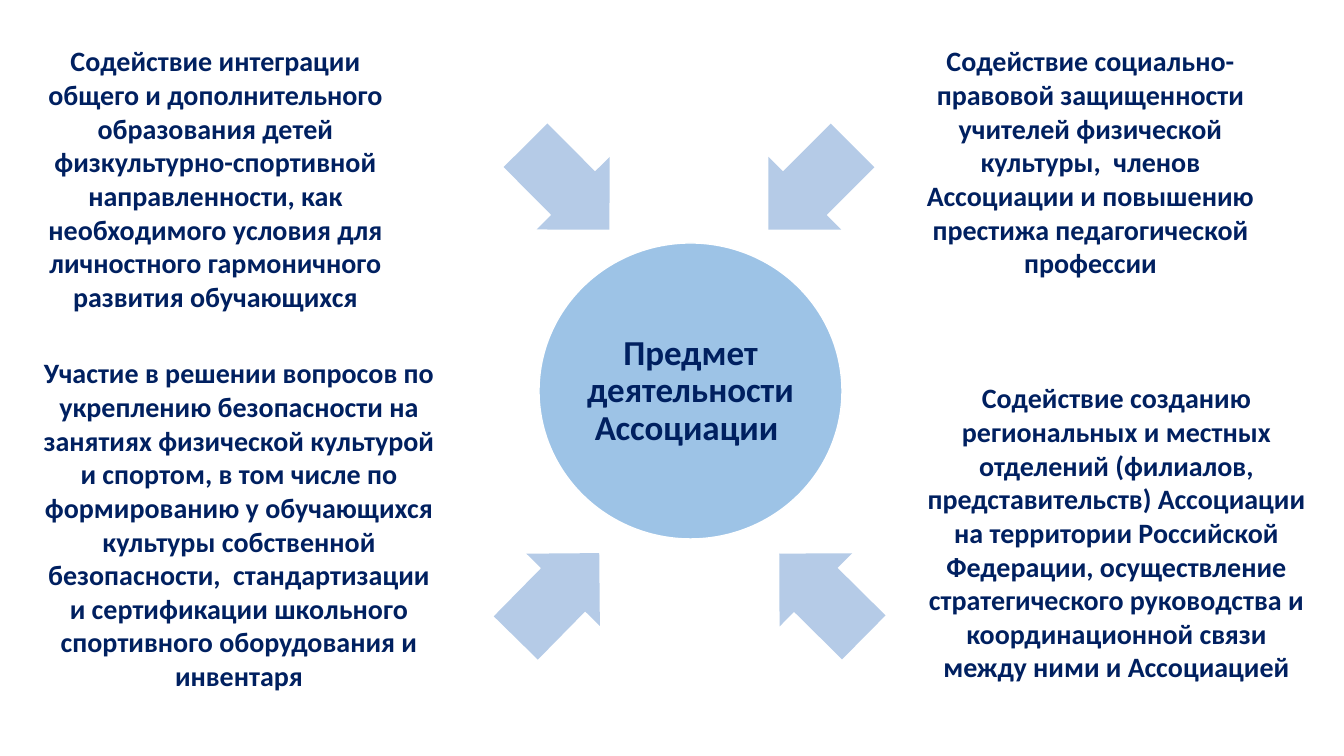
"""Build a slide on the Association's subject of activity: a circle, four arrows and four texts."""
import pptx
import pptx.dml.color
import pptx.enum.shapes
import pptx.enum.text
import pptx.util

PX = 9144000 / 1008
NAVY = "002060"
MSO = pptx.enum.shapes.MSO_SHAPE


def rgb(value):
    return pptx.dml.color.RGBColor.from_string(value)


def add_text(box, text, size):
    sp = slide.shapes.add_textbox(*[round(v * PX) for v in box])
    tf = sp.text_frame
    tf.word_wrap = True
    tf.auto_size = pptx.enum.text.MSO_AUTO_SIZE.SHAPE_TO_FIT_TEXT
    p = tf.paragraphs[0]
    p.alignment = pptx.enum.text.PP_ALIGN.CENTER
    r = p.add_run()
    r.text = text
    r.font.name = "Calibri"
    r.font.size = pptx.util.Pt(size)
    r.font.bold = True
    r.font.color.rgb = rgb(NAVY)
    return p


prs = pptx.Presentation()
prs.slide_width = round(1344 * PX)
prs.slide_height = round(756 * PX)
slide = prs.slides.add_slide(prs.slide_layouts[6])

circle = slide.shapes.add_shape(MSO.OVAL, *[round(v * PX) for v in (539, 243, 303, 296)])
circle.shadow.inherit = False
circle.fill.solid()
circle.fill.fore_color.rgb = rgb("9DC3E6")
circle.line.color.rgb = rgb("FFFFFF")
circle.line.width = pptx.util.Pt(1)

arrows = [(498, 544, 134.5), (762, 544, 44.7), (508, 136, 225.2), (751, 136, 315)]
for left, top, angle in arrows:
    sp = slide.shapes.add_shape(MSO.LEFT_ARROW, *[round(v * PX) for v in (left, top, 119, 103)])
    sp.rotation = angle
    sp.adjustments[0] = 0.6
    sp.adjustments[1] = 0.5
    sp.shadow.inherit = False
    sp.fill.solid()
    sp.fill.fore_color.rgb = rgb("B5CBE7")
    sp.line.fill.background()

p = add_text((545, 330, 291, 125), "Предмет деятельности Ассоциации ", 25)
p.line_spacing = 0.9

activities = [
    ((31, 39, 369, 312),
     "Содействие интеграции общего и дополнительного образования детей "
     "физкультурно-спортивной направленности, как необходимого условия для "
     "личностного гармоничного развития обучающихся"),
    ((31, 351, 416, 380),
     "Участие в решении вопросов по укреплению безопасности на занятиях "
     "физической культурой и спортом, в том числе по формированию у обучающихся "
     "культуры собственной безопасности,  стандартизации и сертификации "
     "школьного спортивного оборудования и инвентаря"),
    ((901, 39, 379, 278),
     "Содействие социально-правовой защищенности учителей физической культуры,  "
     "членов Ассоциации и повышению престижа педагогической профессии"),
    ((917, 376, 399, 346),
     "Содействие созданию региональных и местных отделений (филиалов, "
     "представительств) Ассоциации на территории Российской Федерации, "
     "осуществление стратегического руководства и координационной связи "
     "между ними и Ассоциацией"),
]
for box, text in activities:
    add_text(box, text, 20)

prs.save("out.pptx")
